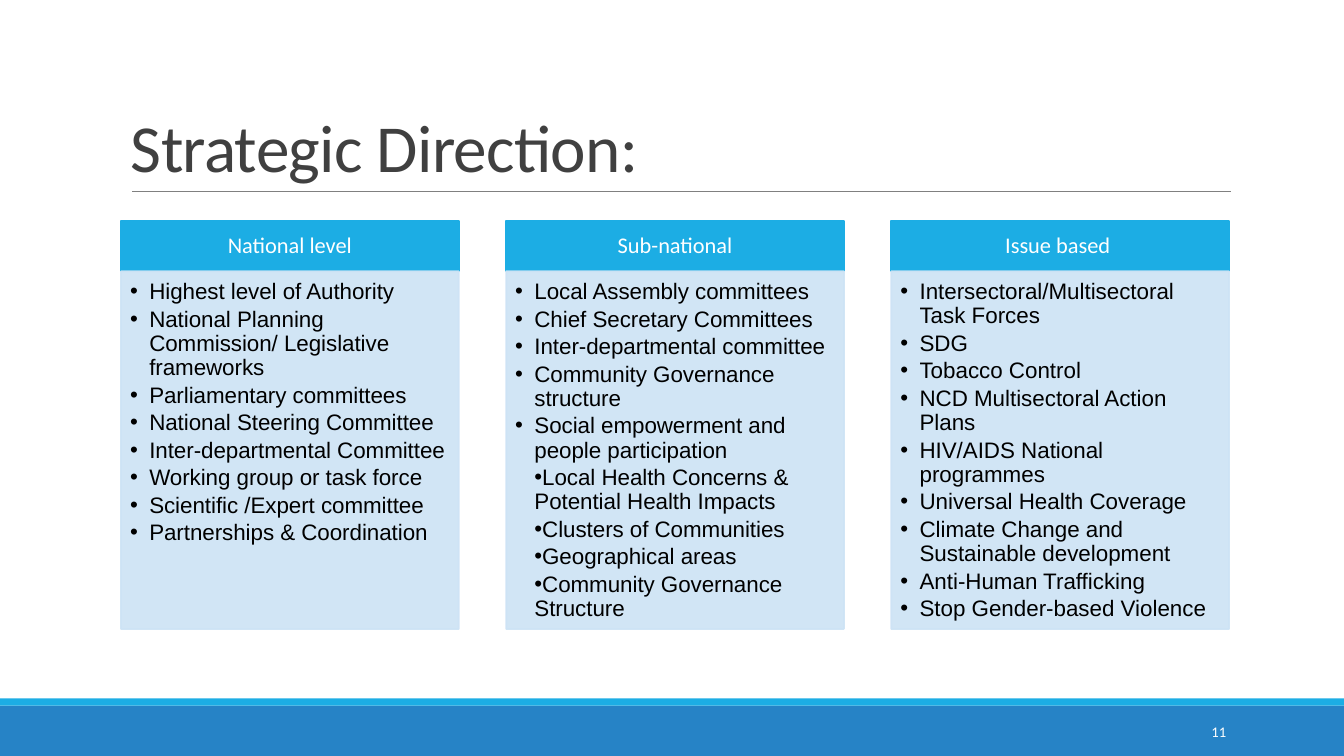
from lxml import etree
from pptx import Presentation, util as u
from pptx.dml.color import RGBColor
from pptx.enum import shapes, text
from pptx.oxml import ns

W, H = 13.33, 7.5
LEFT, COL_W, PITCH = 1.2, 3.35, 3.82
HEAD_TOP, HEAD_H, BODY_H = 2.19, 0.5, 3.55
INDENT = 0.19
BLUE, SKY, PALE = "2683C6", "1CADE4", "CDE3F5"
MIDDLE, BOTTOM, TOP = (text.MSO_ANCHOR.MIDDLE, text.MSO_ANCHOR.BOTTOM,
                       text.MSO_ANCHOR.TOP)
CENTER, RIGHT = text.PP_ALIGN.CENTER, text.PP_ALIGN.RIGHT

prs = Presentation()
prs.slide_width, prs.slide_height = u.Inches(W), u.Inches(H)
s = prs.slides.add_slide(prs.slide_layouts[6])


def add_box(at, color=None, alpha=100, line=None):
    """Add a filled rectangle, or a plain text box when no color is given."""
    at = [u.Inches(v) for v in at]
    if color is None:
        return s.shapes.add_textbox(*at)
    sp = s.shapes.add_shape(shapes.MSO_SHAPE.RECTANGLE, *at)
    sp.shadow.inherit = False
    sp.fill.solid()
    sp.fill.fore_color.rgb = RGBColor.from_string(color)
    if line:
        sp.line.width = u.Pt(line)
        sp.line.color.rgb = RGBColor.from_string(color)
    else:
        sp.line.fill.background()
    if alpha < 100:
        for clr in sp._element.spPr.iter(ns.qn("a:srgbClr")):
            etree.SubElement(clr, ns.qn("a:alpha"), val=str(alpha * 1000))
    return sp


def write(sp, lines, size, color, font="Calibri", spc=0, anchor=MIDDLE,
          insets=(0.1, 0.05, 0.1, 0.05), **para):
    """Fill a shape with paragraphs that share one format."""
    tf = sp.text_frame
    frame = dict(zip(("margin_left", "margin_top", "margin_right", "margin_bottom"),
                     map(u.Inches, insets)))
    frame.update(word_wrap=True, vertical_anchor=anchor)
    for name, value in frame.items():
        setattr(tf, name, value)
    for i, line in enumerate(lines):
        p = tf.paragraphs[0] if i == 0 else tf.add_paragraph()
        for name, value in para.items():
            setattr(p, name, value)
        r = p.add_run()
        r.text = line
        r.font.size, r.font.name = u.Pt(size), font
        r.font.color.rgb = RGBColor.from_string(color)
        r._r.get_or_add_rPr().set("spc", str(spc))
    return tf


# Footer bands and slide number
add_box((0, 7, W, 0.5), BLUE)
add_box((0, 6.93, W, 0.07), SKY)
write(add_box((10.83, 7.06, 1.43, 0.4)), ["11"], 10.5, "FFFFFF", alignment=RIGHT)

# Title and rule
write(add_box((LEFT, 0.31, 11, 1.59)), ["Strategic Direction:"], 48, "404040",
      spc=-50, anchor=BOTTOM, line_spacing=0.85)
rule = s.shapes.add_connector(shapes.MSO_CONNECTOR.STRAIGHT,
                              *map(u.Inches, (1.31, 1.9, 12.21, 1.9)))
rule.line.width = u.Pt(0.5)
rule.line.color.rgb = RGBColor.from_string("808080")
etree.SubElement(rule._element.spPr, ns.qn("a:effectLst"))

# Columns: heading, letter spacing, bullets, run-in bullets
columns = [
    ("National level", -3, [
        "Highest level of Authority",
        "National Planning Commission/ Legislative frameworks",
        "Parliamentary committees",
        "National Steering Committee",
        "Inter-departmental Committee",
        "Working group or task force",
        "Scientific /Expert committee",
        "Partnerships & Coordination",
    ], []),
    ("Sub-national", -3, [
        "Local Assembly committees",
        "Chief Secretary Committees",
        "Inter-departmental committee",
        "Community Governance structure",
        "Social empowerment and people participation",
    ], [
        "Local Health Concerns & Potential Health Impacts",
        "Clusters of Communities",
        "Geographical areas",
        "Community Governance Structure",
    ]),
    ("Issue based ", 0, [
        "Intersectoral/Multisectoral Task Forces",
        "SDG",
        "Tobacco Control",
        "NCD Multisectoral Action Plans",
        "HIV/AIDS National programmes",
        "Universal Health Coverage",
        "Climate Change and Sustainable development",
        "Anti-Human Trafficking",
        "Stop Gender-based Violence",
    ], []),
]

for col, (heading, spc, bullets, run_in) in enumerate(columns):
    x = LEFT + col * PITCH
    head = add_box((x, HEAD_TOP, COL_W, HEAD_H), SKY, line=1.25)
    write(head, [heading], 16, "FFFFFF", insets=(0.12, 0.07, 0.12, 0.07),
          alignment=CENTER, line_spacing=0.9)
    body = add_box((x, HEAD_TOP + HEAD_H, COL_W, BODY_H), PALE, alpha=90, line=1.25)
    tf = write(body, bullets + run_in, 16, "000000", font="Arial", spc=spc,
               anchor=TOP, insets=(0.09, 0.09, 0.12, 0.14),
               alignment=text.PP_ALIGN.LEFT, line_spacing=0.9,
               space_after=u.Pt(2.4), level=1)
    for i, p in enumerate(tf.paragraphs):
        pPr = p._p.get_or_add_pPr()
        hanging = INDENT if i < len(bullets) else 0
        pPr.set("marL", str(u.Inches(INDENT)))
        pPr.set("indent", str(-u.Inches(hanging)))
        etree.SubElement(pPr, ns.qn("a:buFont"), typeface="Arial")
        etree.SubElement(pPr, ns.qn("a:buChar"), char="•")

prs.save("out.pptx")
